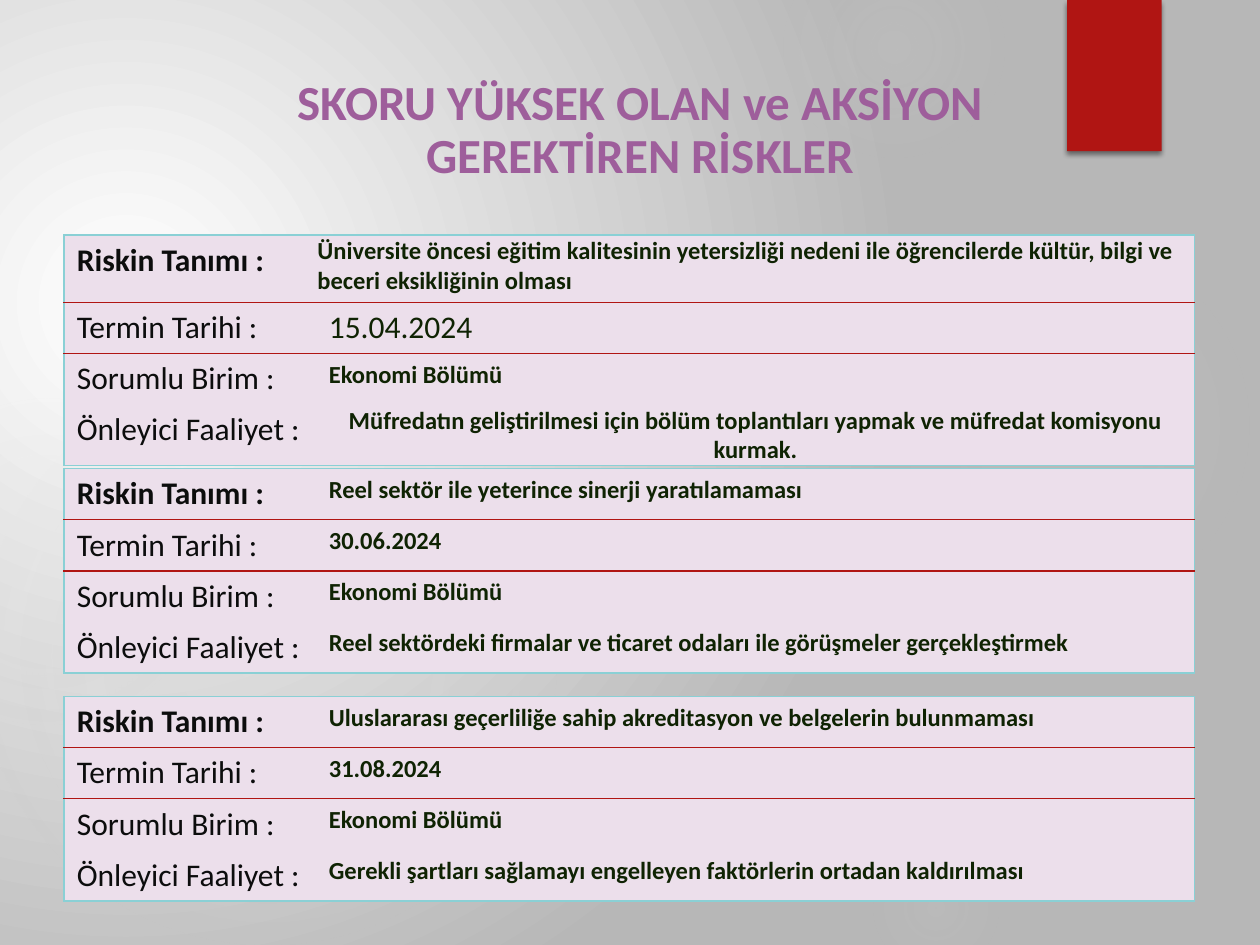
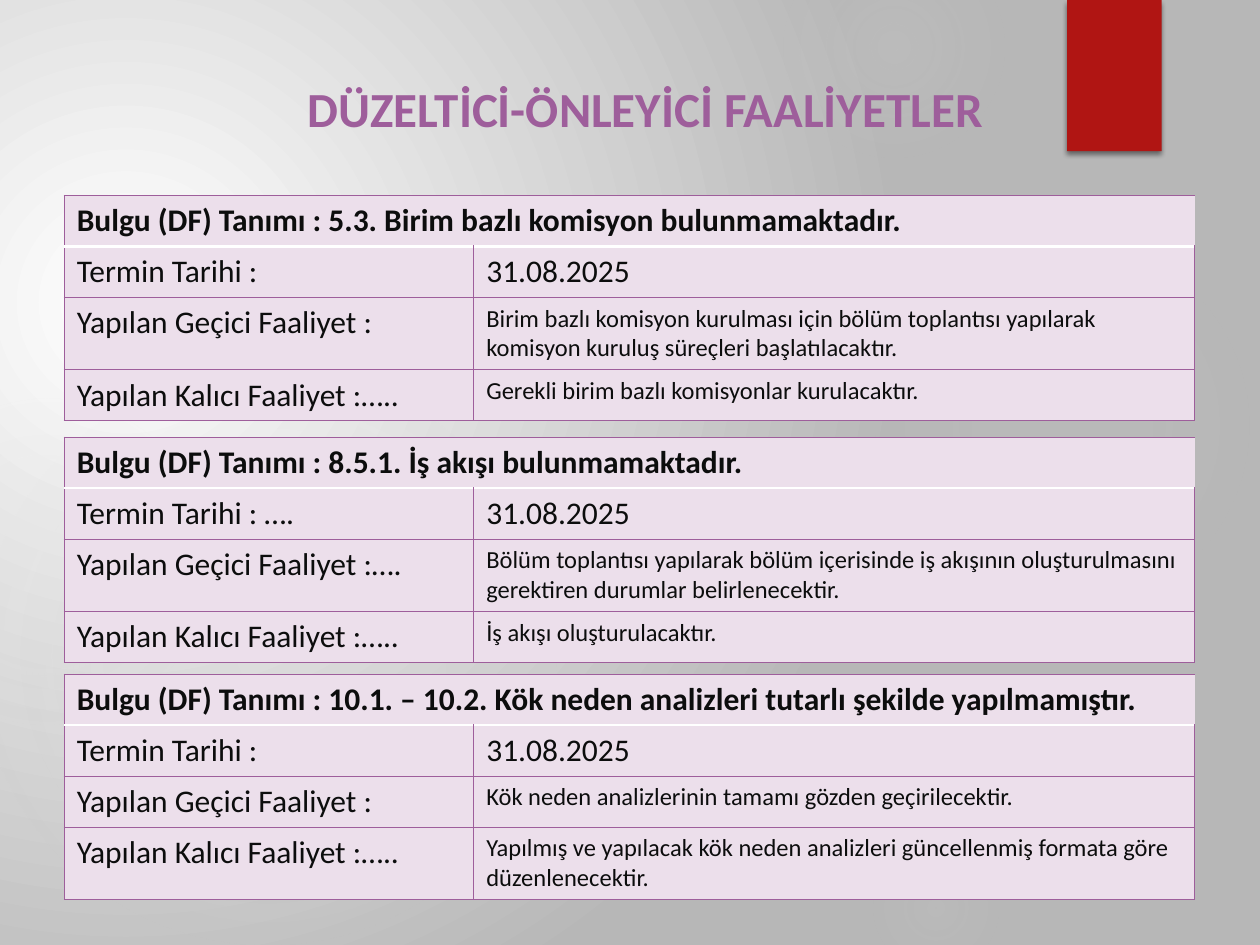
from lxml import etree
from pptx import Presentation
from pptx.dml.color import RGBColor
from pptx.enum.shapes import MSO_SHAPE
from pptx.enum.text import MSO_ANCHOR, MSO_AUTO_SIZE, PP_ALIGN
from pptx.oxml import parse_xml
from pptx.oxml.ns import nsdecls, qn
from pptx.util import Pt

OVAL, RECT = MSO_SHAPE.OVAL, MSO_SHAPE.RECTANGLE
MIDDLE, BOTTOM = MSO_ANCHOR.MIDDLE, MSO_ANCHOR.BOTTOM
CENTER = PP_ALIGN.CENTER

FONT = "Calibri"
PURPLE = RGBColor(0x9E, 0x5E, 0x9B)
LILAC = RGBColor(0xEC, 0xDF, 0xEB)
TEAL = RGBColor(0x8A, 0xD0, 0xD5)
RED = RGBColor(0xB0, 0x15, 0x13)
WHITE = RGBColor(0xFF, 0xFF, 0xFF)
GREY = RGBColor(0xB7, 0xB7, 0xB7)
GLOW = RGBColor(0xD9, 0xD9, 0xD9)
INK = RGBColor(0x0C, 0x0D, 0x0D)
GREEN = RGBColor(0x0F, 0x23, 0x03)

NO_STYLE = "{2D5ABB26-0587-4C30-8999-92F81FD0307C}"
TABLE_LEFT, ROW_HEIGHT = 36.7, 29.2

# left, top, diameter, then (position, opacity) stops
GLOWS = [
    (496, 132, 222, [(0, 7), (36, 6), (69, 0)]),
    (448, -36, 126, [(0, 14), (36, 7), (73, 0)]),
    (496, 480, 78, [(0, 9), (36, 5), (66, 0)]),
    (-12, 210, 330, [(0, 11), (36, 10), (75, 0)]),
    (-66, 228, 186, [(0, 8), (36, 8), (72, 0)]),
]

RISK_LABELS = ["Riskin Tanımı :", "Termin Tarihi :", "Sorumlu Birim :", "Önleyici Faaliyet :"]
RISKS = [
    (134.4, ["Üniversite öncesi eğitim kalitesinin yetersizliği nedeni ile öğrencilerde "
             "kültür, bilgi ve beceri eksikliğinin olması",
             "15.04.2024", "Ekonomi Bölümü",
             "Müfredatın geliştirilmesi için bölüm toplantıları yapmak ve müfredat "
             "komisyonu kurmak."]),
    (267.8, ["Reel sektör ile yeterince sinerji yaratılamaması",
             "30.06.2024", "Ekonomi Bölümü",
             "Reel sektördeki firmalar ve ticaret odaları ile görüşmeler gerçekleştirmek"]),
    (398, ["Uluslararası geçerliliğe sahip akreditasyon ve belgelerin bulunmaması",
           "31.08.2024", "Ekonomi Bölümü",
           "Gerekli şartları sağlamayı engelleyen faktörlerin ortadan kaldırılması"]),
]
FINDINGS = [
    (111.6, [("Bulgu (DF) Tanımı : 5.3. Birim bazlı komisyon bulunmamaktadır.", ""),
             ("Termin Tarihi :", "31.08.2025"),
             ("Yapılan Geçici Faaliyet :",
              "Birim bazlı komisyon kurulması için bölüm toplantısı yapılarak komisyon "
              "kuruluş süreçleri başlatılacaktır."),
             ("Yapılan Kalıcı Faaliyet :…..", "Gerekli birim bazlı komisyonlar kurulacaktır.")]),
    (249.8, [("Bulgu (DF) Tanımı : 8.5.1. İş akışı bulunmamaktadır.", ""),
             ("Termin Tarihi : ….", "31.08.2025"),
             ("Yapılan Geçici Faaliyet :….",
              "Bölüm toplantısı yapılarak bölüm içerisinde iş akışının oluşturulmasını "
              "gerektiren durumlar belirlenecektir."),
             ("Yapılan Kalıcı Faaliyet :…..", "İş akışı oluşturulacaktır.")]),
    (385.2, [("Bulgu (DF) Tanımı : 10.1. – 10.2. Kök neden analizleri tutarlı şekilde "
              "yapılmamıştır.", ""),
             ("Termin Tarihi :", "31.08.2025"),
             ("Yapılan Geçici Faaliyet :",
              "Kök neden analizlerinin tamamı gözden geçirilecektir."),
             ("Yapılan Kalıcı Faaliyet :…..",
              "Yapılmış ve yapılacak kök neden analizleri güncellenmiş formata göre "
              "düzenlenecektir.")]),
]

# borders are (colour, width); "inner" is None where cells have no lines between them
SLIDES = [
    dict(title="SKORU YÜKSEK OLAN ve AKSİYON GEREKTİREN RİSKLER",
         box=(158.4, 41.8, 414.7, 67), anchor=BOTTOM, cols=(144, 502),
         outer=(TEAL, 1), inner=None, divider=(RED, 1),
         value_color=GREEN, value_bold=True, merged=False,
         tables=[(top, list(zip(RISK_LABELS, values))) for top, values in RISKS]),
    dict(title="DÜZELTİCİ-ÖNLEYİCİ FAALİYETLER",
         box=(133.2, 38.2, 470.9, 51), anchor=MIDDLE, cols=(234, 412),
         outer=(PURPLE, 0.75), inner=(PURPLE, 0.75), divider=(WHITE, 1.5),
         value_color=INK, value_bold=False, merged=True, tables=FINDINGS),
]


def radial_fill(stops, l, t, r, b):
    """Circular gradient from (position, colour, opacity) stops, all in percent."""
    gs = "".join(f'<a:gs pos="{pos * 1000}"><a:srgbClr val="{color}">'
                 f'<a:alpha val="{alpha * 1000}"/></a:srgbClr></a:gs>'
                 for pos, color, alpha in stops)
    return parse_xml(
        f'<a:gradFill {nsdecls("a")} rotWithShape="1"><a:gsLst>{gs}</a:gsLst>'
        f'<a:path path="circle"><a:fillToRect l="{l * 1000}" t="{t * 1000}" '
        f'r="{r * 1000}" b="{b * 1000}"/></a:path></a:gradFill>')


def add_border(cell, side, border):
    """Draw one side (L, R, T or B) of a cell; call before filling the cell."""
    color, width = border
    ln = etree.SubElement(cell._tc.get_or_add_tcPr(), qn(f"a:ln{side}"), w=str(Pt(width)))
    fill = etree.SubElement(ln, qn("a:solidFill"))
    etree.SubElement(fill, qn("a:srgbClr"), val=str(color))


prs = Presentation()
prs.slide_width, prs.slide_height = Pt(720), Pt(540)
layout = prs.slide_layouts[5]
slides = [prs.slides.add_slide(layout) for _ in SLIDES]

# Shared background, glows and red band live on the layout
layout.background.fill.solid()
bg = layout.element.find(".//" + qn("p:bgPr"))
bg.replace(bg[0], radial_fill([(0, WHITE, 100), (100, GREY, 100)], 45, 65, 125, 100))

decor = []
for left, top, size, stops in GLOWS:
    sp = slides[0].shapes.add_shape(OVAL, Pt(left), Pt(top), Pt(size), Pt(size))
    sp.shadow.inherit = False
    sp.line.fill.background()
    sp.fill.solid()
    fill = sp._element.spPr.find(qn("a:solidFill"))
    glow = radial_fill([(pos, GLOW, alpha) for pos, alpha in stops], 50, 50, 50, 50)
    sp._element.spPr.replace(fill, glow)
    decor.append(sp)

band = slides[0].shapes.add_shape(RECT, Pt(609.8), Pt(0), Pt(54), Pt(86.4))
band.fill.solid()
band.fill.fore_color.rgb = RED
band.line.fill.background()
band.shadow.inherit = False
band._element.spPr.find(qn("a:effectLst")).append(parse_xml(
    f'<a:outerShdw {nsdecls("a")} blurRad="{Pt(3)}" dist="{Pt(2)}" dir="5400000">'
    '<a:srgbClr val="000000"><a:alpha val="45000"/></a:srgbClr></a:outerShdw>'))
decor.append(band)
for sp in decor:
    layout.shapes._spTree.append(sp._element)

for slide, data in zip(slides, SLIDES):
    title = slide.shapes.title
    title.left, title.top, title.width, title.height = map(Pt, data["box"])
    tf = title.text_frame
    tf.text = data["title"]
    tf.word_wrap = True
    tf.auto_size = MSO_AUTO_SIZE.NONE
    tf.vertical_anchor = data["anchor"]
    p = tf.paragraphs[0]
    p.alignment, p.line_spacing, p.space_after = CENTER, 0.9, Pt(6)
    font = p.runs[0].font
    font.name, font.size, font.bold = FONT, Pt(28), True
    font.color.rgb = PURPLE

    outer, inner, divider = data["outer"], data["inner"], data["divider"]
    for top, rows in data["tables"]:
        last = len(rows) - 1
        frame = slide.shapes.add_table(len(rows), 2, Pt(TABLE_LEFT), Pt(top),
                                       Pt(sum(data["cols"])), Pt(ROW_HEIGHT * len(rows)))
        table = frame.table
        table._tbl.tblPr.find(qn("a:tableStyleId")).text = NO_STYLE
        for column, width in zip(table.columns, data["cols"]):
            column.width = Pt(width)
        for i, texts in enumerate(rows):
            table.rows[i].height = Pt(ROW_HEIGHT)
            middle = None if i == 0 and data["merged"] else inner
            for j, text in enumerate(texts):
                cell = table.cell(i, j)
                sides = {"L": middle if j else outer,
                         "R": outer if j else middle,
                         "T": outer if i == 0 else divider if i == 1 else inner,
                         "B": divider if i == 0 else outer if i == last else inner}
                for side, border in sides.items():
                    if border:
                        add_border(cell, side, border)
                cell.fill.solid()
                cell.fill.fore_color.rgb = LILAC
                if not text:
                    continue
                cell.text = text
                font = cell.text_frame.paragraphs[0].runs[0].font
                font.name = FONT
                font.size = Pt(14 if j and not (inner and i == 1) else 18)
                font.bold = data["value_bold"] if j else i == 0
                font.color.rgb = data["value_color"] if j else INK
        if data["merged"]:
            table.cell(0, 0).merge(table.cell(0, 1))

# The first risk has a plain date and two tightly set long texts
first = next(sp for sp in slides[0].shapes if sp.has_table).table
date_font = first.cell(1, 1).text_frame.paragraphs[0].runs[0].font
date_font.size, date_font.bold = Pt(18), False
for row, bottom in ((0, 3.6), (3, 0)):
    cell = first.cell(row, 1)
    cell.vertical_anchor = MIDDLE
    cell.margin_left = cell.margin_right = cell.margin_top = Pt(0.7)
    cell.margin_bottom = Pt(bottom)
first.cell(3, 1).text_frame.paragraphs[0].alignment = CENTER

prs.save("out.pptx")
